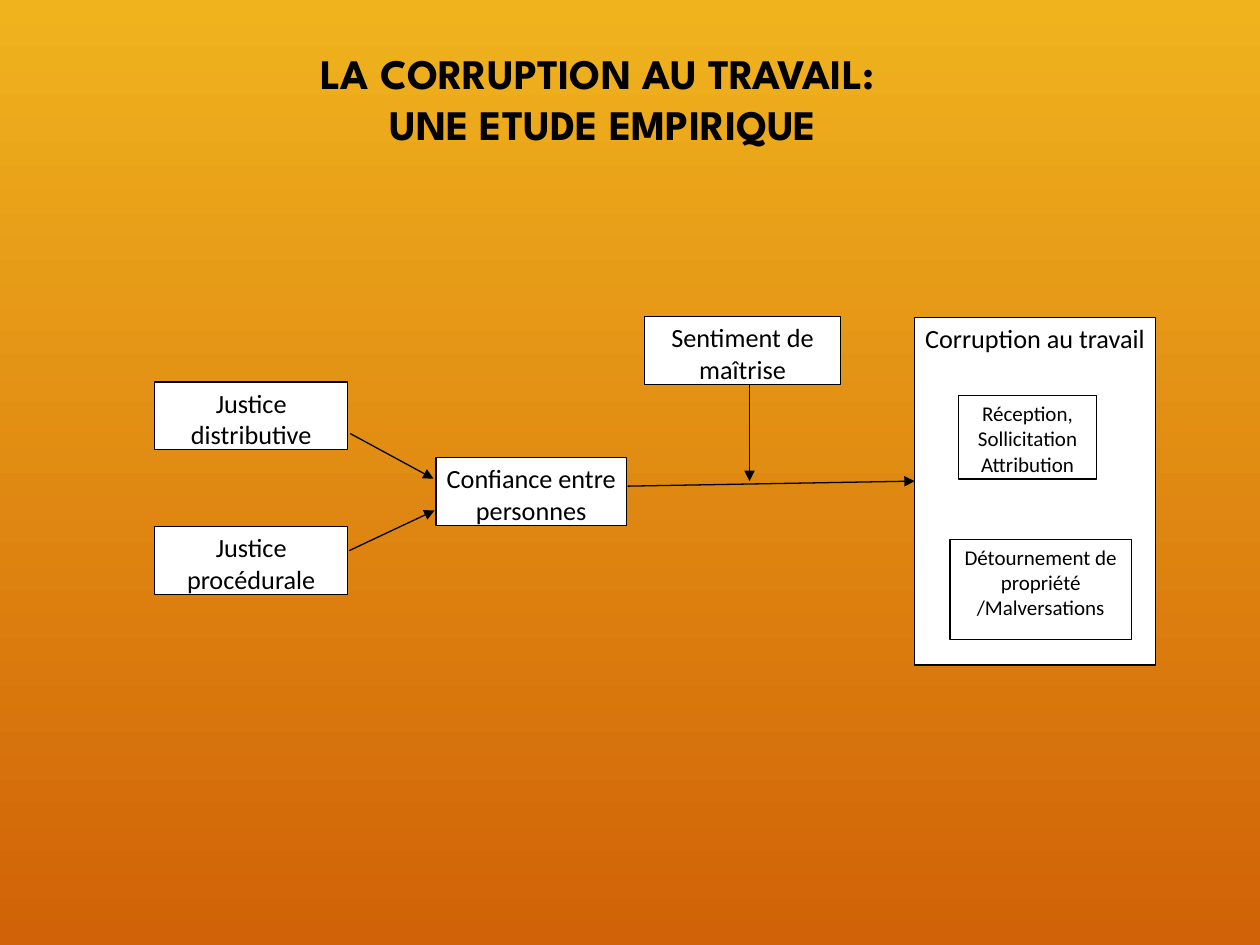
from pptx import Presentation
from pptx.dml.color import RGBColor
from pptx.enum.shapes import MSO_CONNECTOR, MSO_SHAPE
from pptx.enum.text import MSO_ANCHOR, MSO_AUTO_SIZE, PP_ALIGN
from pptx.oxml.ns import qn
from pptx.util import Cm, Pt
from lxml.etree import SubElement

BLACK = RGBColor(0x00, 0x00, 0x00)
WHITE = RGBColor(0xFF, 0xFF, 0xFF)
AMBER = RGBColor(0xF0, 0xB3, 0x1E)
RUST = RGBColor(0xD1, 0x62, 0x07)

TITLE = ["LA CORRUPTION AU TRAVAIL: ", "UNE ETUDE EMPIRIQUE"]
TITLE_PLACE = (5.87, 0.84, 12.57, 2.31)

# paragraphs, text size, (left, top, width, height) in cm
CONCEPTS = [
    (["Corruption au travail"], 15, (18.44, 6.4, 4.85, 7.01)),
    (["Justice distributive"], 15, (3.12, 7.7, 3.89, 1.37)),
    (["Sentiment de maîtrise"], 15, (13, 6.38, 3.94, 1.37)),
    (["Justice procédurale"], 15, (3.12, 10.62, 3.89, 1.37)),
    (["Détournement de propriété /Malversations"], 12, (19.15, 10.87, 3.66, 2.03)),
    (["Réception, Sollicitation", "Attribution"], 12, (19.33, 7.98, 2.77, 1.68)),
    (["Confiance entre personnes"], 15, (8.79, 9.22, 3.84, 1.37)),
]

# start x, start y, end x, end y in cm
INFLUENCES = [
    (7.06, 8.74, 8.74, 9.65),    # justice distributive -> confiance
    (7.04, 11.1, 8.76, 10.29),   # justice procédurale -> confiance
    (12.65, 9.8, 18.44, 9.7),    # confiance -> corruption
    (15.11, 7.77, 15.11, 9.7),   # maîtrise -> confiance/corruption link
]


def write(frame, paragraphs, *, size, font="Calibri", bold=False):
    for index, text in enumerate(paragraphs):
        paragraph = frame.paragraphs[0] if index == 0 else frame.add_paragraph()
        paragraph.alignment = PP_ALIGN.CENTER
        run = paragraph.add_run()
        run.text = text
        run.font.size = Pt(size)
        run.font.name = font
        run.font.bold = bold
        run.font.color.rgb = BLACK


def add_title(slide):
    title = slide.shapes.title
    title.left, title.top, title.width, title.height = map(Cm, TITLE_PLACE)
    frame = title.text_frame
    frame.word_wrap = False
    frame.auto_size = MSO_AUTO_SIZE.SHAPE_TO_FIT_TEXT
    frame.vertical_anchor = MSO_ANCHOR.TOP
    write(frame, TITLE, size=24, font="League Spartan", bold=True)


def add_concept(slide, paragraphs, size, place):
    concept = slide.shapes.add_shape(MSO_SHAPE.RECTANGLE, *map(Cm, place))
    concept.shadow.inherit = False
    concept.fill.solid()
    concept.fill.fore_color.rgb = WHITE
    concept.line.color.rgb = BLACK
    concept.line.width = Pt(0.75)
    frame = concept.text_frame
    frame.word_wrap = True
    frame.vertical_anchor = MSO_ANCHOR.TOP
    frame.margin_left = frame.margin_right = Cm(0.18)
    frame.margin_top = frame.margin_bottom = Cm(0.1)
    write(frame, paragraphs, size=size)


def add_influence(slide, ends):
    arrow = slide.shapes.add_connector(MSO_CONNECTOR.STRAIGHT, *map(Cm, ends))
    arrow.line.color.rgb = BLACK
    arrow.line.width = Pt(0.75)
    SubElement(arrow.line._get_or_add_ln(), qn("a:tailEnd"), type="triangle")
    SubElement(arrow._element.spPr, qn("a:effectLst"))


def main():
    deck = Presentation()
    deck.slide_width, deck.slide_height = Cm(25.4), Cm(19.05)
    slide = deck.slides.add_slide(deck.slide_layouts[5])

    backdrop = slide.background.fill
    backdrop.gradient()
    backdrop.gradient_angle = 270
    for stop, color in zip(backdrop.gradient_stops, (AMBER, RUST)):
        stop.color.rgb = color

    add_title(slide)
    for concept in CONCEPTS:
        add_concept(slide, *concept)
    for ends in INFLUENCES:
        add_influence(slide, ends)
    deck.save("out.pptx")


if __name__ == "__main__":
    main()
